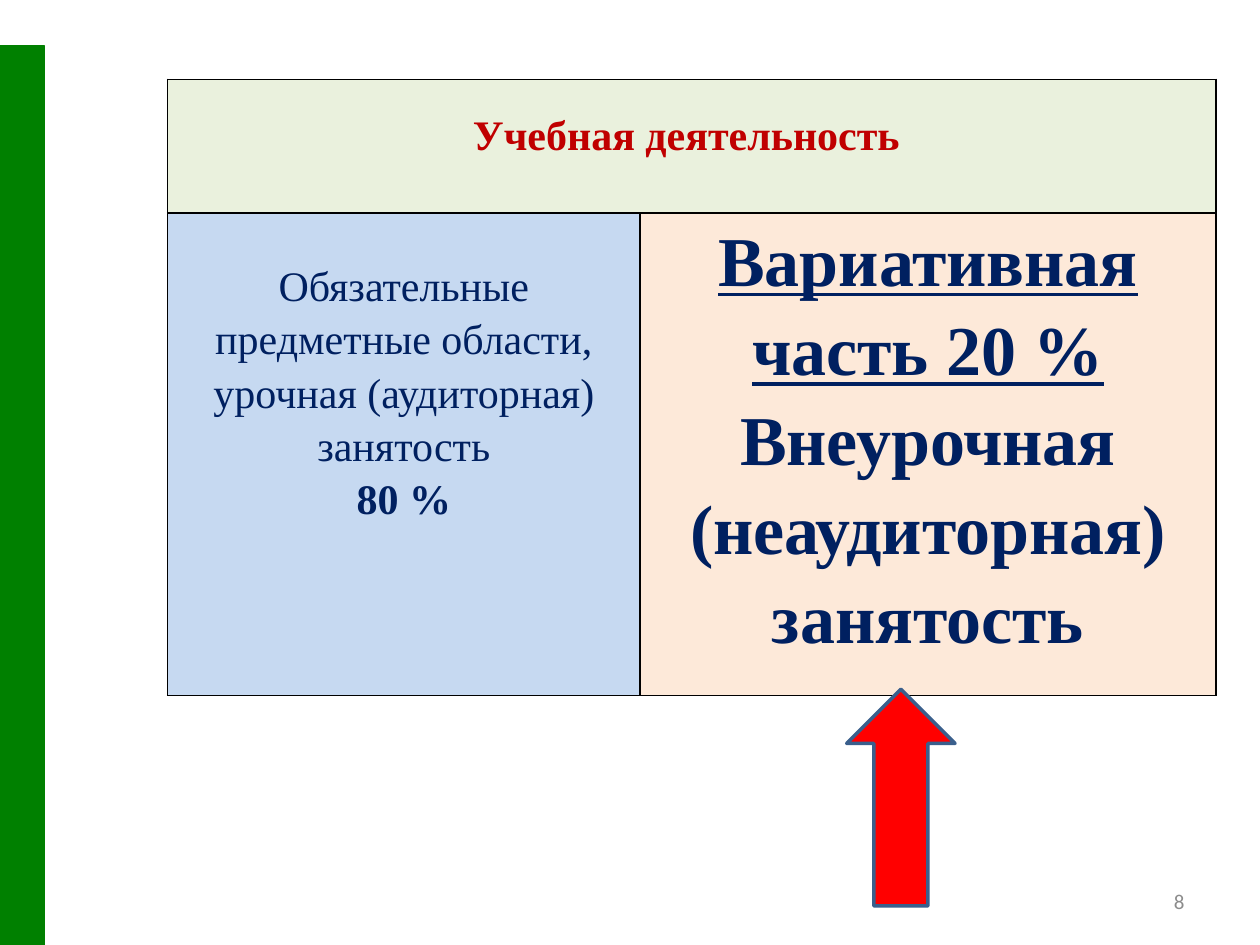
"""Build a slide that splits learning activity into its compulsory and variable parts."""
from lxml.etree import SubElement
from pptx import Presentation
from pptx.dml.color import RGBColor
from pptx.enum.shapes import MSO_SHAPE as Shape
from pptx.enum.text import MSO_ANCHOR as Anchor, PP_ALIGN as Align
from pptx.oxml.ns import qn
from pptx.util import Inches, Pt

COLORS = {
    "bar": "008000", "arrow": "FF0000", "arrow_line": "3A5F8C",
    "header": "EAF1DD", "compulsory": "C6D9F1", "variable": "FDE9D9",
    "heading": "C00000", "body": "002060", "border": "000000", "number": "8C8C8C",
}
SERIF, SANS = "Times New Roman", "Calibri"
SLIDE_SIZE = (10, 7.5)
TABLE_LEFT, TABLE_TOP = 1.33, 0.63
COLUMNS, ROWS = (3.75, 4.57), (1.06, 3.54)
SIDE_MARGIN = 0.07

CELLS = [
    {"at": (0, 0), "fill": "header", "color": "heading", "size": 24, "top": 0.27, "spacing": 1,
     "lines": [("Учебная деятельность ", {"bold": True})]},
    {"at": (1, 0), "fill": "compulsory", "color": "body", "size": 24, "top": 0.35, "spacing": 1.15,
     "lines": [("Обязательные предметные области, урочная (аудиторная) занятость", {}),
               ("80 %", {"bold": True})]},
    {"at": (1, 1), "fill": "variable", "color": "body", "size": 40, "top": 0, "spacing": 1.15,
     "lines": [("Вариативная часть 20 %", {"bold": True, "underline": True}),
               ("Внеурочная (неаудиторная) занятость", {"bold": True})]},
]
SHAPES = [
    (Shape.RECTANGLE, (0, 0.36, 0.35, 7.14), "bar", "bar", 0.75),
    (Shape.UP_ARROW, (6.72, 5.47, 0.86, 1.72), "arrow", "arrow_line", 2),
]
PAGE_NUMBER, NUMBER_BOX = "8", (7.17, 6.95, 2.33, 0.4)


def rgb(name):
    return RGBColor.from_string(COLORS[name])


def inches(values):
    return [Inches(value) for value in values]


def add_run(paragraph, text, font_name, size, color, bold=False, underline=False):
    run = paragraph.add_run()
    run.text = text
    font = run.font
    font.name, font.size, font.bold, font.underline = font_name, Pt(size), bold, underline
    font.color.rgb = rgb(color)


def add_filled_shape(slide, kind, box, fill, line, width):
    shape = slide.shapes.add_shape(kind, *inches(box))
    shape.shadow.inherit = False
    shape.fill.solid()
    shape.fill.fore_color.rgb = rgb(fill)
    shape.line.color.rgb = rgb(line)
    shape.line.width = Pt(width)


def add_borders(cell):
    properties = cell._tc.get_or_add_tcPr()
    for index, side in enumerate(("lnL", "lnR", "lnT", "lnB")):
        line = properties.makeelement(qn(f"a:{side}"), {"w": str(Pt(1))})
        fill = SubElement(line, qn("a:solidFill"))
        SubElement(fill, qn("a:srgbClr"), val=COLORS["border"])
        properties.insert(index, line)


def fill_cell(cell, content):
    cell.fill.solid()
    cell.fill.fore_color.rgb = rgb(content["fill"])
    cell.margin_left = cell.margin_right = Inches(SIDE_MARGIN)
    cell.margin_top, cell.margin_bottom = Inches(content["top"]), 0
    frame = cell.text_frame
    for index, (text, style) in enumerate(content["lines"]):
        paragraph = frame.add_paragraph() if index else frame.paragraphs[0]
        paragraph.alignment = Align.CENTER
        paragraph.line_spacing = content["spacing"]
        add_run(paragraph, text, SERIF, content["size"], content["color"], **style)


def add_activity_table(slide):
    box = inches((TABLE_LEFT, TABLE_TOP, sum(COLUMNS), sum(ROWS)))
    table = slide.shapes.add_table(len(ROWS), len(COLUMNS), *box).table
    for column, width in zip(table.columns, COLUMNS):
        column.width = Inches(width)
    for row, height in zip(table.rows, ROWS):
        row.height = Inches(height)
    table.cell(0, 0).merge(table.cell(0, 1))
    for content in CELLS:
        fill_cell(table.cell(*content["at"]), content)
    for cell in table.iter_cells():
        add_borders(cell)


def add_page_number(slide):
    frame = slide.shapes.add_textbox(*inches(NUMBER_BOX)).text_frame
    frame.word_wrap = True
    frame.vertical_anchor = Anchor.MIDDLE
    paragraph = frame.paragraphs[0]
    paragraph.alignment = Align.RIGHT
    add_run(paragraph, PAGE_NUMBER, SANS, 12, "number")


def main():
    presentation = Presentation()
    presentation.slide_width, presentation.slide_height = inches(SLIDE_SIZE)
    slide = presentation.slides.add_slide(presentation.slide_layouts[6])
    bar, arrow = SHAPES
    add_filled_shape(slide, *bar)
    add_page_number(slide)
    add_activity_table(slide)
    add_filled_shape(slide, *arrow)
    presentation.save("out.pptx")


if __name__ == "__main__":
    main()
